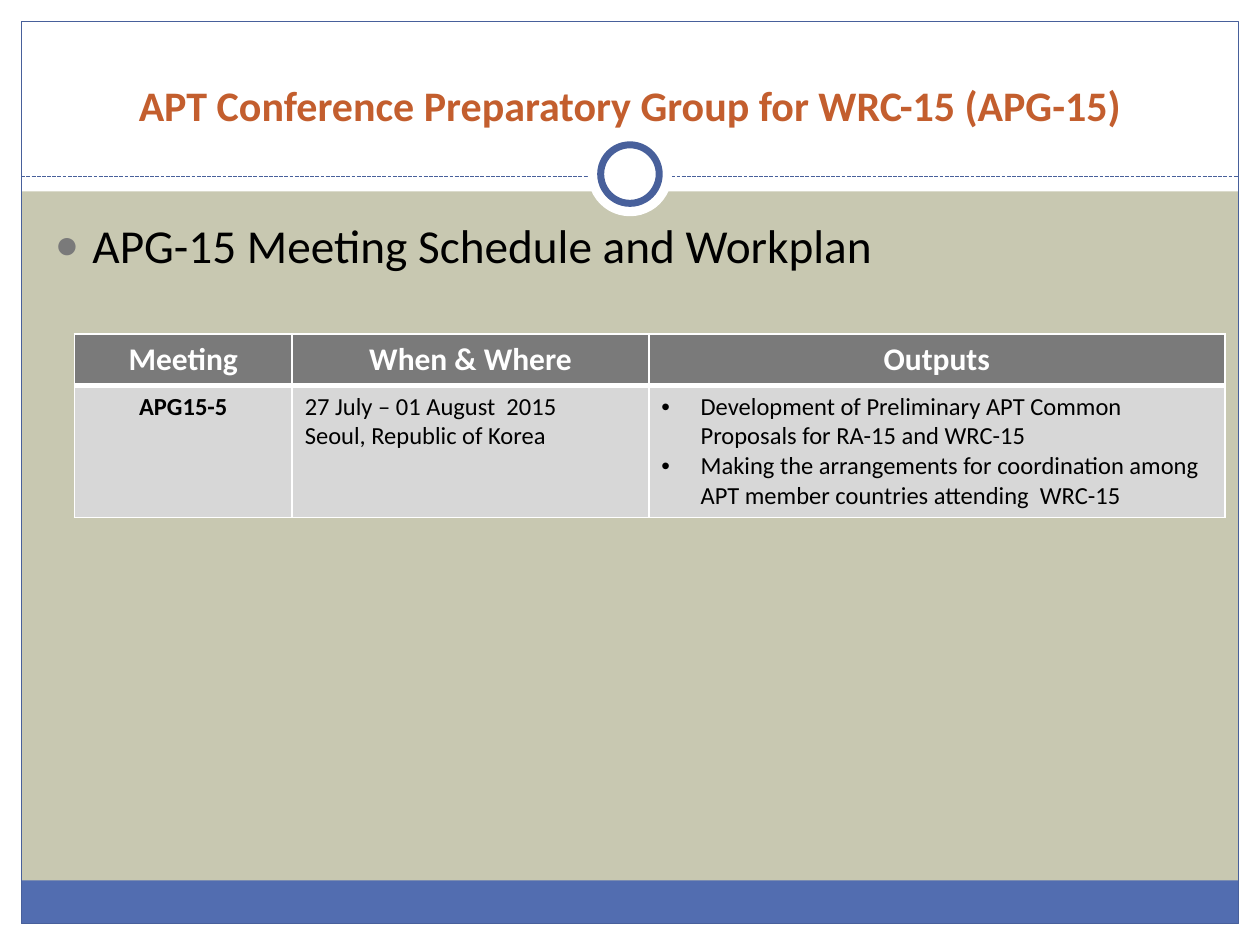
from dataclasses import dataclass

from lxml import etree
from pptx import Presentation
from pptx import util as u
from pptx.dml import color as col
from pptx.enum import dml, shapes, text
from pptx.oxml import ns

Cm, Pt = u.Cm, u.Pt
MID, LEFT = text.PP_ALIGN.CENTER, text.PP_ALIGN.LEFT
RECT, OVAL = shapes.MSO_SHAPE.RECTANGLE, shapes.MSO_SHAPE.OVAL


@dataclass(frozen=True)
class Theme:
    font: str = "Calibri"
    page: str = "C8C8B1"
    white: str = "FFFFFF"
    black: str = "000000"
    bar: str = "526DB0"
    rule: str = "48609B"
    title: str = "C35E2E"
    head: str = "7A7A7A"
    cell: str = "D7D7D7"
    title_pt: int = 24
    body_pt: int = 27
    head_pt: int = 18
    cell_pt: int = 14
    thin: float = 0.75


T = Theme()


@dataclass(frozen=True)
class Part:
    """A preset shape; lengths in centimetres."""
    kind: shapes.MSO_SHAPE
    left: float
    top: float
    width: float
    height: float
    fill: str | None = None
    line: str | None = None
    weight: float = T.thin


@dataclass(frozen=True)
class Bullet:
    char: str
    indent: float
    color: str
    size: int = 100


@dataclass(frozen=True)
class Entry:
    """The text of one table cell."""
    lines: tuple[str, ...]
    align: text.PP_ALIGN = MID
    bold: bool = True
    bullet: Bullet | None = None


def rgb(code: str) -> col.RGBColor:
    return col.RGBColor.from_string(code)


def add(parent, tag: str, **attrs: str):
    return etree.SubElement(parent, ns.qn(tag), attrs)


def draw(slide, part: Part) -> None:
    box = slide.shapes.add_shape(part.kind, Cm(part.left), Cm(part.top),
                                 Cm(part.width), Cm(part.height))
    box.shadow.inherit = False
    if part.fill:
        box.fill.solid()
        box.fill.fore_color.rgb = rgb(part.fill)
    else:
        box.fill.background()
    if part.line:
        box.line.color.rgb = rgb(part.line)
        box.line.width = Pt(part.weight)
    else:
        box.line.fill.background()


def disc(mid: tuple[float, float], size: float, **look) -> Part:
    x, y = mid
    return Part(OVAL, x - size / 2, y - size / 2, size, size, T.white, **look)


def mark(para, dot: Bullet) -> None:
    props = para._p.get_or_add_pPr()
    props.set("marL", str(Cm(dot.indent)))
    props.set("indent", str(-Cm(dot.indent)))
    add(add(props, "a:buClr"), "a:srgbClr", val=dot.color)
    add(props, "a:buSzPct", val=str(dot.size * 1000))
    add(props, "a:buFont", typeface="Arial")
    add(props, "a:buChar", char=dot.char)


def write(frame, entry: Entry, size: int, color: str) -> None:
    frame.text = "\n".join(entry.lines)
    frame.word_wrap = True
    for para in frame.paragraphs:
        if entry.bullet:
            mark(para, entry.bullet)
        para.alignment = entry.align
        para.space_before = Pt(0)
        for run in para.runs:
            font = run.font
            font.name, font.size, font.bold = T.font, Pt(size), entry.bold
            font.color.rgb = rgb(color)


def place(slide, holder, box: tuple[float, ...], anchor, entry: Entry,
          size: int, color: str) -> None:
    holder.left, holder.top, holder.width, holder.height = map(Cm, box)
    frame = holder.text_frame
    frame.auto_size = text.MSO_AUTO_SIZE.NONE
    frame.vertical_anchor = anchor
    write(frame, entry, size, color)
    # Bring the text in front of the frame parts
    holder.element.getparent().append(holder.element)


def edge(cell, **weights: float) -> None:
    props = cell._tc.get_or_add_tcPr()
    for side in "LRTB":
        line = add(props, f"a:ln{side}", w=str(Pt(weights.get(side, 1))))
        add(add(line, "a:solidFill"), "a:srgbClr", val=T.white)


def add_grid(slide, left: float, top: float, cols: tuple[float, ...],
             rows: tuple[float, ...], data) -> None:
    grid = slide.shapes.add_table(len(rows), len(cols), Cm(left), Cm(top),
                                  Cm(sum(cols)), Cm(sum(rows))).table
    grid.first_row = grid.horz_banding = False
    for item, width in zip(grid.columns, cols):
        item.width = Cm(width)
    for item, height in zip(grid.rows, rows):
        item.height = Cm(height)
    looks = ((T.head, T.white, T.head_pt, {"B": 3}),
             (T.cell, T.black, T.cell_pt, {"T": 3}))
    for r, (fill, ink, size, lines) in enumerate(looks):
        for c, entry in enumerate(data[r]):
            cell = grid.cell(r, c)
            edge(cell, **lines)
            cell.fill.solid()
            cell.fill.fore_color.rgb = rgb(fill)
            write(cell.text_frame, entry, size, ink)


def main() -> None:
    deck = Presentation()
    wide, high, rim, split = 25.4, 19.05, 0.43, 3.56
    deck.slide_width, deck.slide_height = Cm(wide), Cm(high)
    slide = deck.slides.add_slide(deck.slide_layouts[1])
    slide.background.fill.solid()
    slide.background.fill.fore_color.rgb = rgb(T.page)

    # White margins, footer bar and thin frame
    inner = wide - 2 * rim
    for part in (
        Part(RECT, 0, high - rim, wide, rim, T.white),
        Part(RECT, 0, 0, wide, 3.86, T.white),
        Part(RECT, 0, 0, rim, high, T.white),
        Part(RECT, wide - rim, 0, rim, high, T.white),
        Part(RECT, rim, 17.75, inner, 0.87, T.bar),
        Part(RECT, rim, rim, inner, high - 2 * rim, line=T.rule),
    ):
        draw(slide, part)

    # Dashed rule with the ring on it
    rule = slide.shapes.add_connector(shapes.MSO_CONNECTOR.STRAIGHT, Cm(rim),
                                      Cm(split), Cm(wide - rim), Cm(split))
    rule.line.color.rgb = rgb(T.rule)
    rule.line.width = Pt(T.thin)
    rule.line.dash_style = dml.MSO_LINE.SQUARE_DOT
    add(rule.element.spPr, "a:effectLst")
    hub = (wide / 2, 3.51)
    draw(slide, disc(hub, 1.7))
    draw(slide, disc(hub, 1.18, line=T.rule, weight=4))

    # Title and list
    place(slide, slide.shapes.title, (0.85, 0.64, 23.7, 2.1),
          text.MSO_ANCHOR.BOTTOM,
          Entry(("APT Conference Preparatory Group for WRC-15 (APG-15)",)),
          T.title_pt, T.title)
    place(slide, slide.placeholders[1], (0.85, 4.24, 23.62, 12.7),
          text.MSO_ANCHOR.TOP,
          Entry(("APG-15 Meeting Schedule and Workplan",), LEFT, False,
                Bullet("●", 0.76, T.head, 85)),
          T.body_pt, T.black)

    # Meeting table
    head = [Entry((name,)) for name in ("Meeting", "When & Where", "Outputs")]
    body = [
        Entry(("APG15-5",)),
        Entry(("27 July – 01 August  2015", "Seoul, Republic of Korea"),
              LEFT, False),
        Entry(("Development of Preliminary APT Common Proposals for RA-15 "
               "and WRC-15",
               "Making the arrangements for coordination among APT member "
               "countries attending  WRC-15"),
              LEFT, False, Bullet("•", 0.79, T.black)),
    ]
    add_grid(slide, 1.5, 6.73, (4.39, 7.19, 11.61), (1.04, 2.62), (head, body))
    deck.save("out.pptx")


if __name__ == "__main__":
    main()
